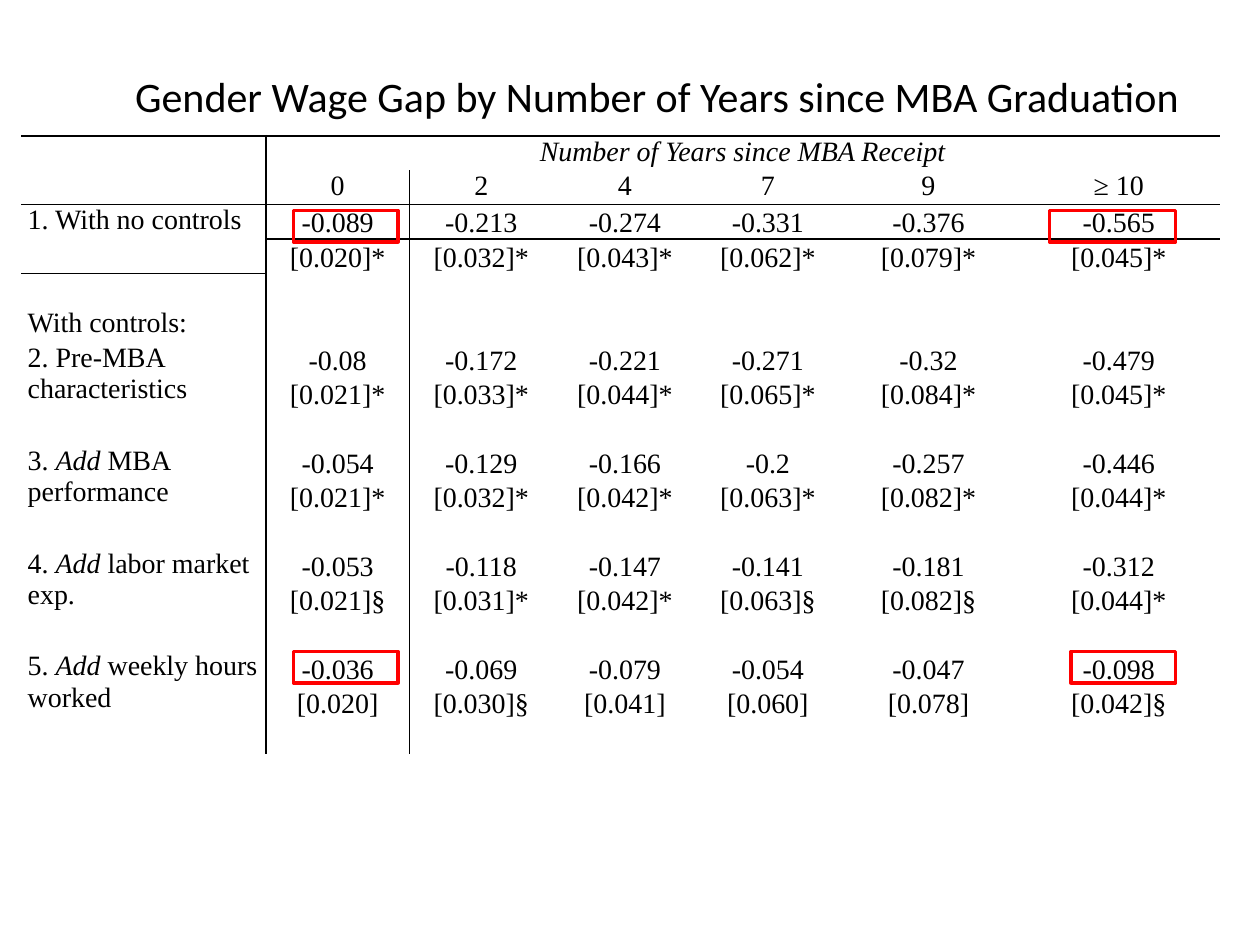
from lxml.etree import SubElement
from pptx import Presentation
from pptx.dml.color import RGBColor
from pptx.enum.shapes import MSO_SHAPE as Shape
from pptx.enum.text import MSO_ANCHOR as Anchor, PP_ALIGN as Align
from pptx.oxml import parse_xml
from pptx.oxml.ns import nsdecls, qn
from pptx.util import Inches, Pt

COLORS = {"text": "000000", "rule": "000000", "highlight": "FF0000"}
NO_STYLE = "{2D5ABB26-0587-4C30-8999-92F81FD0307C}"
COLUMN_WIDTHS = [1.94, 1.14, 1.14, 1.14, 1.13, 1.42, 1.6]
ROW_COUNT = 18
YEARS = ["0", "2", "4", "7", "9", "≥ 10"]
CONTROLS_ROW = 5

# First row, rows spanned by the label, label (italics between bars), estimates, errors
MODELS = [
    (2, 2, "1. With no controls",
     "-0.089 -0.213 -0.274 -0.331 -0.376 -0.565",
     "[0.020]* [0.032]* [0.043]* [0.062]* [0.079]* [0.045]*"),
    (6, 2, "2. Pre-MBA characteristics",
     "-0.08 -0.172 -0.221 -0.271 -0.32 -0.479",
     "[0.021]* [0.033]* [0.044]* [0.065]* [0.084]* [0.045]*"),
    (9, 3, "3. |Add| MBA performance",
     "-0.054 -0.129 -0.166 -0.2 -0.257 -0.446",
     "[0.021]* [0.032]* [0.042]* [0.063]* [0.082]* [0.044]*"),
    (12, 2, "4. |Add| labor market exp.",
     "-0.053 -0.118 -0.147 -0.141 -0.181 -0.312",
     "[0.021]§ [0.031]* [0.042]* [0.063]§ [0.082]§ [0.044]*"),
    (15, 2, "5. |Add| weekly hours worked",
     "-0.036 -0.069 -0.079 -0.054 -0.047 -0.098",
     "[0.020] [0.030]§ [0.041] [0.060] [0.078] [0.042]§"),
]


def color(name):
    return RGBColor.from_string(COLORS[name])


def set_font(paragraph, name, size):
    paragraph.font.name = name
    paragraph.font.size = Pt(size)
    paragraph.font.color.rgb = color("text")


def add_title(slide, left, top, width, height):
    title = slide.shapes.title
    title.left, title.top = Inches(left), Inches(top)
    title.width, title.height = Inches(width), Inches(height)
    frame = title.text_frame
    frame.text = "Gender Wage Gap by Number of Years since MBA Graduation"
    frame.word_wrap = True
    frame.vertical_anchor = Anchor.TOP
    frame.margin_top = Inches(0.06)
    paragraph = frame.paragraphs[0]
    paragraph.alignment = Align.CENTER
    set_font(paragraph, "Calibri", 24)


def write_cell(cell, text, align=Align.CENTER, anchor=Anchor.TOP):
    cell.vertical_anchor = anchor
    paragraph = cell.text_frame.paragraphs[0]
    paragraph.alignment = align
    for index, part in enumerate(text.split("|")):
        run = paragraph.add_run()
        run.text = part
        if index % 2:
            run.font.italic = True


def add_borders(cell, row, column):
    borders = {
        "lnL": 1 if column == 1 else 0,
        "lnR": 1 if column == 0 else 0,
        "lnT": {0: 1.5, 2: 1}.get(row, 0),
        "lnB": 1 if row == 1 else 0,
    }
    properties = cell._tc.get_or_add_tcPr()
    drawn = [(tag, width) for tag, width in borders.items() if width]
    for position, (tag, width) in enumerate(drawn):
        properties.insert(position, parse_xml(
            f'<a:{tag} {nsdecls("a")} w="{Pt(width)}"><a:solidFill>'
            f'<a:srgbClr val="{COLORS["rule"]}"/></a:solidFill></a:{tag}>'))


def format_cell(cell, row, column):
    cell.margin_left = cell.margin_right = Inches(0.05)
    cell.margin_top = cell.margin_bottom = 0
    cell.fill.background()
    paragraph = cell.text_frame.paragraphs[0]
    set_font(paragraph, "Times New Roman", 16)
    if not paragraph.runs:
        # Keeps an empty row as low as the others
        SubElement(paragraph._p, qn("a:endParaRPr"), sz="1600")
    add_borders(cell, row, column)


def add_wage_table(slide, left, top, width, height):
    frame = slide.shapes.add_table(ROW_COUNT, len(COLUMN_WIDTHS), Inches(left),
                                   Inches(top), Inches(width), Inches(height))
    table = frame.table
    table.first_row = table.horz_banding = False
    next(frame.element.iter(qn("a:tableStyleId"))).text = NO_STYLE
    for column, column_width in zip(table.columns, COLUMN_WIDTHS):
        column.width = Inches(column_width)
    for row in table.rows:
        row.height = Inches(height / ROW_COUNT)

    # Header
    table.cell(0, 0).merge(table.cell(1, 0))
    table.cell(0, 1).merge(table.cell(0, len(YEARS)))
    write_cell(table.cell(0, 1), "|Number of Years since MBA Receipt|".strip("|"))
    table.cell(0, 1).text_frame.paragraphs[0].font.italic = True
    for column, year in enumerate(YEARS, 1):
        write_cell(table.cell(1, column), year)

    # Models
    write_cell(table.cell(CONTROLS_ROW, 0), "With controls:", Align.LEFT)
    for first, span, label, estimates, errors in MODELS:
        table.cell(first, 0).merge(table.cell(first + span - 1, 0))
        write_cell(table.cell(first, 0), label, Align.LEFT)
        for row, values in enumerate((estimates, errors), first):
            for column, value in enumerate(values.split(), 1):
                write_cell(table.cell(row, column), value, anchor=Anchor.BOTTOM)

    for row in range(ROW_COUNT):
        for column in range(len(COLUMN_WIDTHS)):
            format_cell(table.cell(row, column), row, column)


def add_highlight(slide, left, top, width, height):
    box = slide.shapes.add_shape(Shape.RECTANGLE, Inches(left), Inches(top),
                                 Inches(width), Inches(height))
    box.shadow.inherit = False
    box.fill.background()
    box.line.color.rgb = color("highlight")
    box.line.width = Pt(2)


def main():
    presentation = Presentation()
    presentation.slide_width, presentation.slide_height = Inches(10), Inches(7.5)
    slide = presentation.slides.add_slide(presentation.slide_layouts[5])
    add_title(slide, 0.25, 0.5, 9.93, 0.81)
    add_wage_table(slide, 0.17, 1.08, 9.5, 4.91)
    # First and last estimates of the first and last models
    for left, top, width in [(2.33, 1.67, 0.83), (2.33, 5.17, 0.83),
                             (8.5, 5.17, 0.83), (8.33, 1.67, 1)]:
        add_highlight(slide, left, top, width, 0.25)
    presentation.save("out.pptx")


if __name__ == "__main__":
    main()
